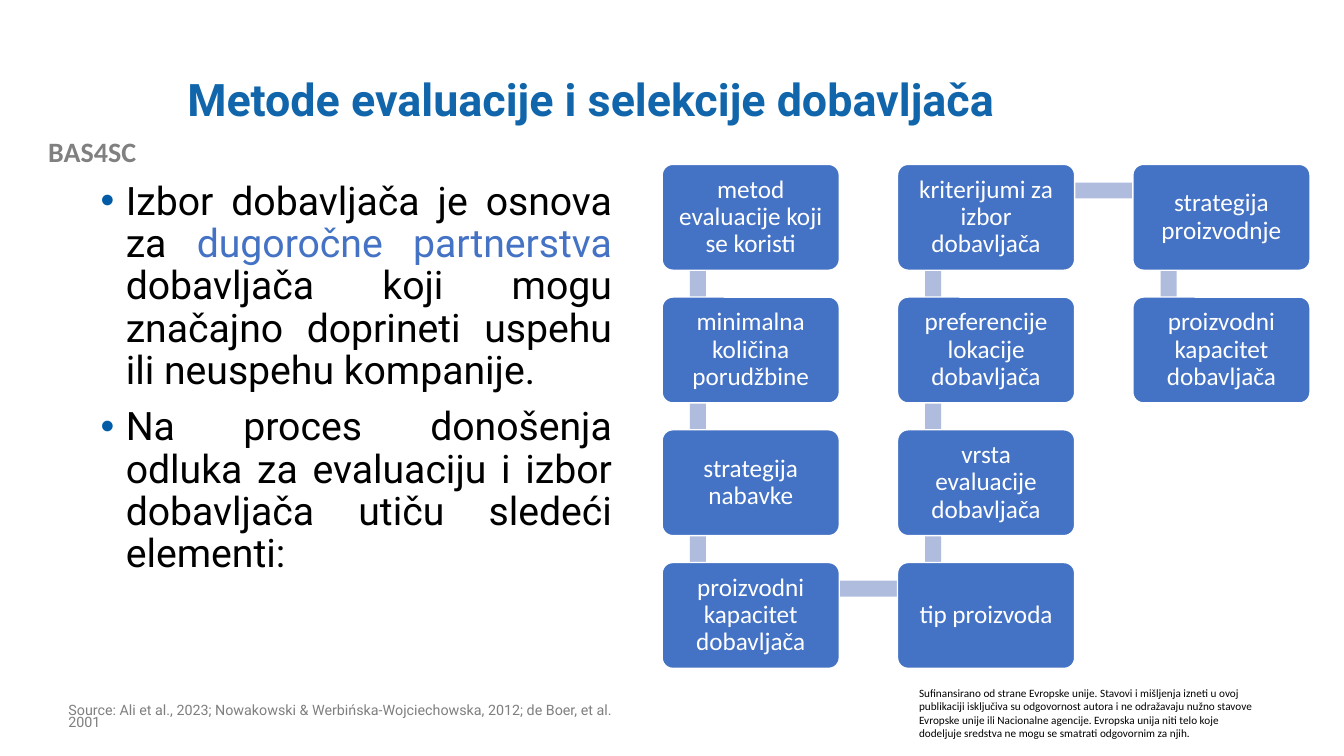
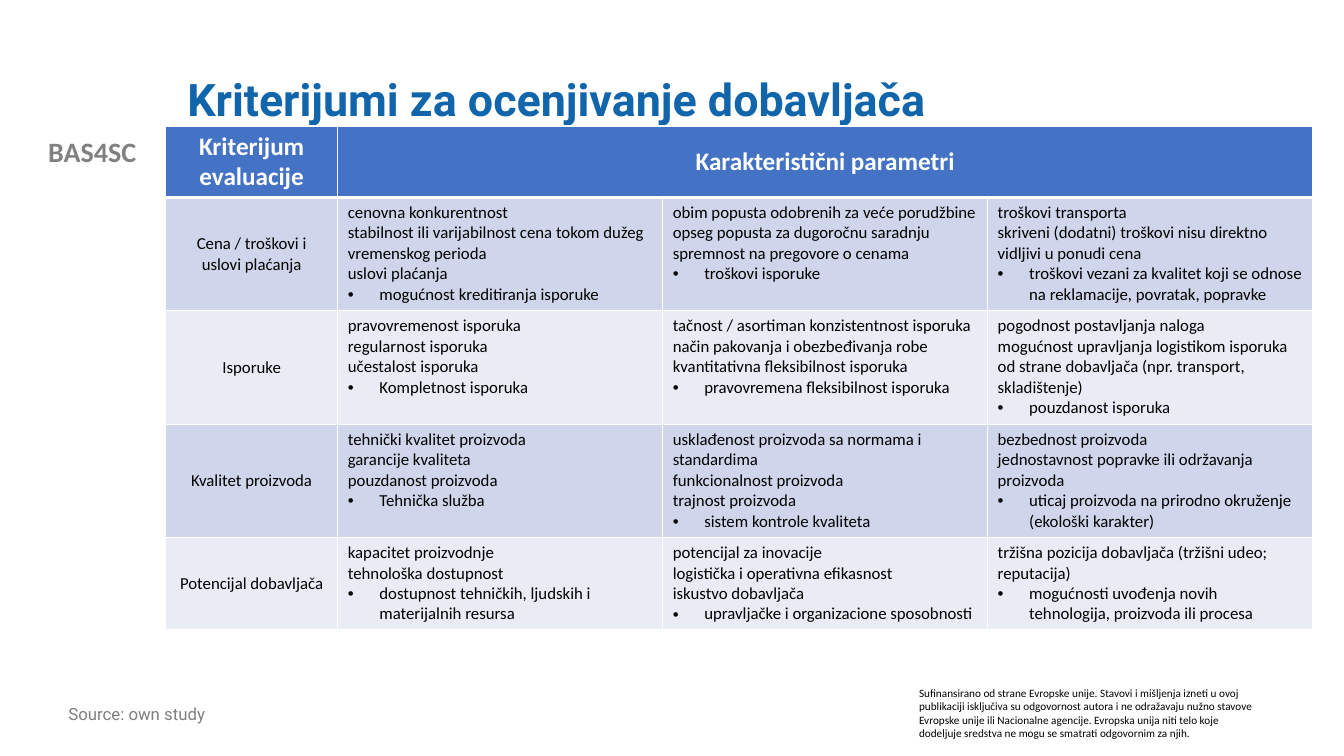
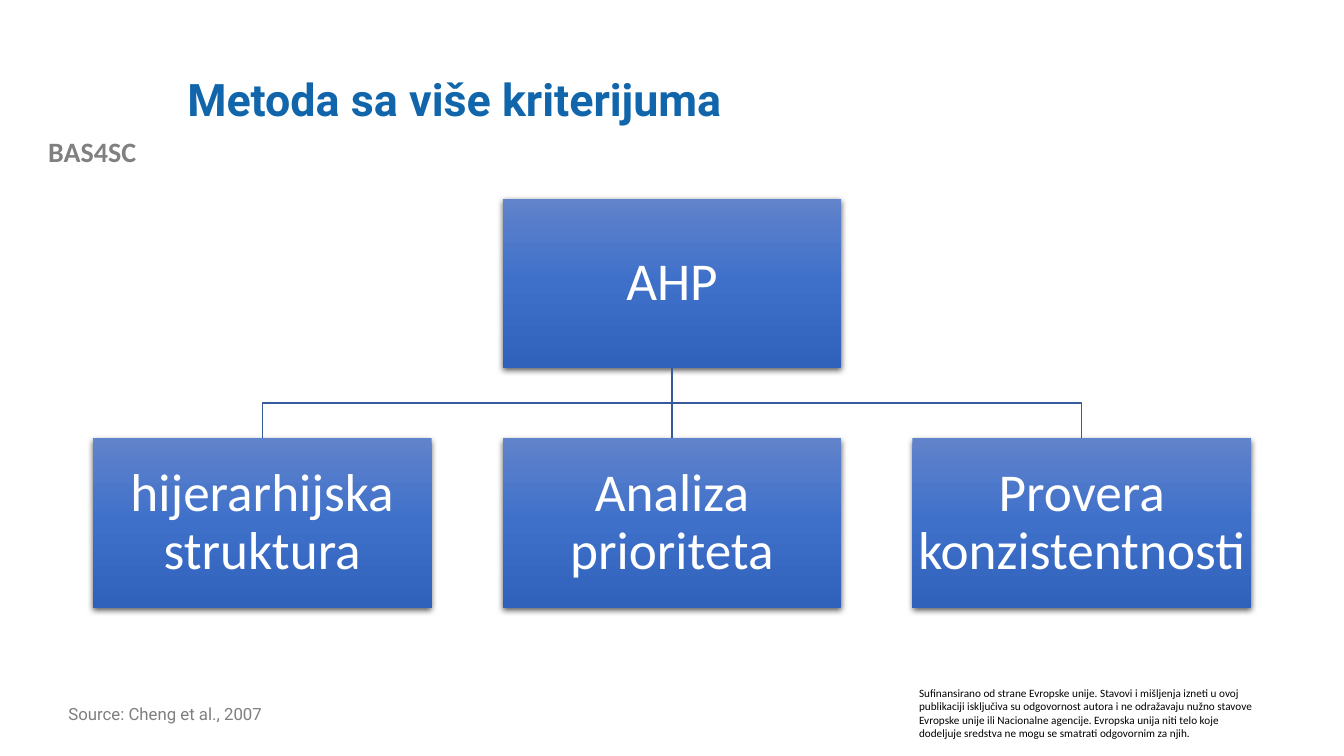
import copy
from dataclasses import dataclass

import pptx
import pptx.dml.color
import pptx.enum.shapes
import pptx.enum.text
import pptx.oxml
import pptx.oxml.ns
import pptx.util
from lxml import etree

Pt = pptx.util.Pt
RGB = pptx.dml.color.RGBColor
Align = pptx.enum.text.PP_ALIGN
Anchor = pptx.enum.text.MSO_ANCHOR
Kind = pptx.enum.shapes.MSO_SHAPE
qn = pptx.oxml.ns.qn

# Colours and fonts
WHITE = RGB(0xFF, 0xFF, 0xFF)
BLACK = RGB(0, 0, 0)
GREY = RGB(0x80, 0x80, 0x80)
ASH = RGB(0x7F, 0x7F, 0x7F)
TITLE = RGB(0x10, 0x65, 0xAB)
DOT = RGB(0x01, 0x5B, 0xA6)
BLUE = RGB(0x44, 0x72, 0xC4)
PALE = RGB(0xB0, 0xBC, 0xDE)
BANDS = (RGB(0xCF, 0xD5, 0xEA), RGB(0xE9, 0xEB, 0xF5))
LINK = RGB(0x36, 0x5B, 0x9D)
SHADES = (RGB(0x61, 0x83, 0xCB), RGB(0x3E, 0x70, 0xCA), RGB(0x30, 0x62, 0xBB))
SANS = "Calibri"
HEAD = "Roboto"

NOTICE = (
    "Sufinansirano od strane Evropske unije. Stavovi i mišljenja izneti u ovoj "
    "publikaciji isključiva su odgovornost autora i ne odražavaju nužno stavove "
    "Evropske unije ili Nacionalne agencije. Evropska unija niti telo koje "
    "dodeljuje sredstva ne mogu se smatrati odgovornim za njih."
)


@dataclass
class Box:
    x: float
    y: float
    w: float
    h: float

    def size(self):
        return Pt(self.x), Pt(self.y), Pt(self.w), Pt(self.h)


@dataclass
class Row:
    name: str
    cells: tuple


# Text
def add_dot(para, indent: float, color: RGB):
    props = para._p.get_or_add_pPr()
    props.set("marL", str(Pt(indent)))
    props.set("indent", str(-Pt(indent)))
    tint = etree.SubElement(props, qn("a:buClr"))
    etree.SubElement(tint, qn("a:srgbClr"), val=str(color))
    etree.SubElement(props, qn("a:buFont"), typeface="Arial")
    etree.SubElement(props, qn("a:buChar"), char="•")


def write(frame, text, *, size: float, font: str = SANS, color: RGB = BLACK,
          bold: bool = False, align=Align.LEFT, lead: float = 1, gap: float = 0,
          dots=(), indent: float = 0, dot: RGB = BLACK):
    """Text is one string or a list of paragraphs; a paragraph may be (text, colour) runs."""
    frame.word_wrap = True
    lines = [text] if isinstance(text, str) else text
    for i, line in enumerate(lines):
        para = frame.paragraphs[0] if i == 0 else frame.add_paragraph()
        if i in dots:
            add_dot(para, indent, dot)
        para.alignment = align
        para.line_spacing = lead
        if i and gap:
            para.space_before = Pt(gap)
        for words, tone in [(line, color)] if isinstance(line, str) else line:
            run = para.add_run()
            run.text = words
            run.font.size = Pt(size)
            run.font.name = font
            run.font.bold = bold
            run.font.color.rgb = tone


def add_text(slide, box: Box, text, anchor=Anchor.TOP, **style):
    frame = slide.shapes.add_textbox(*box.size()).text_frame
    frame.vertical_anchor = anchor
    write(frame, text, **style)


def add_block(slide, kind, box: Box, inset: float = 0):
    block = slide.shapes.add_shape(kind, *box.size())
    block.shadow.inherit = False
    block.line.fill.background()
    frame = block.text_frame
    frame.vertical_anchor = Anchor.MIDDLE
    frame.margin_left = frame.margin_right = Pt(inset)
    frame.margin_top = frame.margin_bottom = Pt(inset)
    return block


# Parts shared by all slides
def add_page(deck, title: str, source: str, size: float = 12, lead: float = 0.9):
    slide = deck.slides.add_slide(deck.slide_layouts[6])
    add_text(slide, Box(0, 92.2, 131.8, 31.7), "BAS4SC", size=20, color=GREY,
             bold=True, align=Align.CENTER)
    add_text(slide, Box(649.4, 486.7, 256.3, 46), NOTICE, size=8)
    add_text(slide, Box(126.7, 28.8, 767.5, 87.8), title, Anchor.MIDDLE, size=32,
             font=HEAD, color=TITLE, bold=True, lead=0.9)
    add_text(slide, Box(41.8, 501, 424.8, 25.2), source, size=size, font=HEAD,
             color=ASH, lead=lead)
    return slide


# Slide 1: chain of factors, down and up the columns
FACTORS = (
    "metod evaluacije koji se koristi", "minimalna količina porudžbine",
    "strategija nabavke", "proizvodni kapacitet dobavljača",
    "tip proizvoda", "vrsta evaluacije dobavljača",
    "preferencije lokacije dobavljača", "kriterijumi za izbor dobavljača",
    "strategija proizvodnje", "proizvodni kapacitet dobavljača",
)
DEEP = 4


def find_spot(i: int) -> Box:
    col, step = divmod(i, DEEP)
    row = DEEP - 1 - step if col % 2 else step
    return Box(473 + col * 168.1, 117.4 + row * 94.8, 126.5, 75.6)


def add_bar(slide, one: Box, two: Box):
    left, top = min(one.x, two.x), min(one.y, two.y)
    down = one.x == two.x
    mid_x, mid_y = (left + 25.5, top + 66.2) if down else (left + 109.8, top + 18.7)
    span, thick = (94.3 if down else 167.8), 11.4
    bar = add_block(slide, Kind.RECTANGLE,
                    Box(mid_x - span / 2, mid_y - thick / 2, span, thick))
    bar.fill.solid()
    bar.fill.fore_color.rgb = PALE
    if down:
        bar.rotation = 90 if two.y > one.y else 270


def add_chain(slide):
    for i, factor in enumerate(FACTORS):
        spot = find_spot(i)
        if i + 1 < len(FACTORS):
            add_bar(slide, spot, find_spot(i + 1))
        block = add_block(slide, Kind.ROUNDED_RECTANGLE, spot, inset=7)
        block.adjustments[0] = 0.1
        block.fill.solid()
        block.fill.fore_color.rgb = BLUE
        block.line.color.rgb = WHITE
        block.line.width = Pt(1)
        write(block.text_frame, factor, size=18, color=WHITE, align=Align.CENTER, lead=0.9)


def make_intro(deck):
    slide = add_page(
        deck, "Metode evaluacije i selekcije dobavljača",
        "Source: Ali et al., 2023; Nowakowski & Werbińska-Wojciechowska, 2012; "
        "de Boer, et al. 2001", size=10.2, lead=0.7)
    body = [
        [("Izbor dobavljača je osnova za ", BLACK), ("dugoročne partnerstva ", BLUE),
         ("dobavljača koji mogu značajno doprineti uspehu ili neuspehu kompanije.", BLACK)],
        "Na proces donošenja odluka za evaluaciju i izbor dobavljača utiču sledeći elementi:",
    ]
    add_text(slide, Box(64.8, 126, 379.4, 342.7), body, size=28, font=HEAD,
             align=Align.JUSTIFY, lead=0.9, gap=10, dots=(0, 1), indent=18, dot=DOT)
    add_chain(slide)


# Slide 2: table of criteria
ROWS = (
    Row("Cena / troškovi i uslovi plaćanja", (
        ("cenovna konkurentnost",
         "stabilnost ili varijabilnost cena tokom dužeg vremenskog perioda",
         "uslovi plaćanja", "mogućnost kreditiranja isporuke"),
        ("obim popusta odobrenih za veće porudžbine",
         "opseg popusta za dugoročnu saradnju",
         "spremnost na pregovore o cenama", "troškovi isporuke"),
        ("troškovi transporta",
         "skriveni (dodatni) troškovi nisu direktno vidljivi u ponudi cena",
         "troškovi vezani za kvalitet koji se odnose na reklamacije, povratak, popravke"))),
    Row("Isporuke", (
        ("pravovremenost isporuka", "regularnost isporuka",
         "učestalost isporuka", "Kompletnost isporuka"),
        ("tačnost / asortiman konzistentnost isporuka",
         "način pakovanja i obezbeđivanja robe",
         "kvantitativna fleksibilnost isporuka", "pravovremena fleksibilnost isporuka"),
        ("pogodnost postavljanja naloga",
         "mogućnost upravljanja logistikom isporuka od strane dobavljača "
         "(npr. transport, skladištenje)",
         "pouzdanost isporuka"))),
    Row("Kvalitet proizvoda", (
        ("tehnički kvalitet proizvoda", "garancije kvaliteta",
         "pouzdanost proizvoda", "Tehnička služba"),
        ("usklađenost proizvoda sa normama i standardima", "funkcionalnost proizvoda",
         "trajnost proizvoda", "sistem kontrole kvaliteta"),
        ("bezbednost proizvoda", "jednostavnost popravke ili održavanja proizvoda",
         "uticaj proizvoda na prirodno okruženje (ekološki karakter)"))),
    Row("Potencijal dobavljača", (
        ("kapacitet proizvodnje", "tehnološka dostupnost",
         "dostupnost tehničkih, ljudskih i materijalnih resursa"),
        ("potencijal za inovacije", "logistička i operativna efikasnost",
         "iskustvo dobavljača", "upravljačke i organizacione sposobnosti"),
        ("tržišna pozicija dobavljača (tržišni udeo; reputacija)",
         "mogućnosti uvođenja novih tehnologija, proizvoda ili procesa"))),
)
WIDTHS = (123, 232.1, 232.1, 232.1)
HEIGHTS = (51, 81, 81, 81, 66)


def paint_cell(cell, fill: RGB, top: float, base: float):
    cell.fill.solid()
    cell.fill.fore_color.rgb = fill
    props = cell._tc.get_or_add_tcPr()
    edges = (("a:lnL", 1), ("a:lnR", 1), ("a:lnT", top), ("a:lnB", base))
    for i, (tag, width) in enumerate(edges):
        edge = etree.Element(qn(tag), w=str(Pt(width)))
        tint = etree.SubElement(edge, qn("a:solidFill"))
        etree.SubElement(tint, qn("a:srgbClr"), val=str(WHITE))
        props.insert(i, edge)


def make_table(deck):
    slide = add_page(deck, "Kriterijumi za ocenjivanje dobavljača", "Source: own study")
    area = Box(118.3, 90, sum(WIDTHS), sum(HEIGHTS))
    table = slide.shapes.add_table(len(HEIGHTS), len(WIDTHS), *area.size()).table
    for col, width in zip(table.columns, WIDTHS):
        col.width = Pt(width)
    for r, height in enumerate(HEIGHTS):
        table.rows[r].height = Pt(height)
        for c in range(len(WIDTHS)):
            paint_cell(table.cell(r, c), BANDS[(r - 1) % 2] if r else BLUE,
                       3 if r == 1 else 1, 1 if r else 3)
    table.cell(0, 1).merge(table.cell(0, 3))
    for c, name in enumerate(("Kriterijum evaluacije", "Karakteristični parametri")):
        cell = table.cell(0, c)
        cell.vertical_anchor = Anchor.MIDDLE
        write(cell.text_frame, name, size=18, color=WHITE, bold=True, align=Align.CENTER)
    for r, row in enumerate(ROWS, 1):
        cell = table.cell(r, 0)
        cell.vertical_anchor = Anchor.MIDDLE
        write(cell.text_frame, row.name, size=12, align=Align.CENTER)
        for c, items in enumerate(row.cells, 1):
            write(table.cell(r, c).text_frame, items, size=12,
                  dots=(len(items) - 1,), indent=22.5)


# Slide 3: tree
SHADOW = (
    '<a:outerShdw %s blurRad="57150" dist="19050" dir="5400000" algn="ctr" '
    'rotWithShape="0"><a:srgbClr val="000000"><a:alpha val="63000"/></a:srgbClr>'
    "</a:outerShdw>" % pptx.oxml.ns.nsdecls("a")
)
MID, WIDE, TALL, PITCH = 480, 242, 121, 292.7
ROOT, LEAF = 141.8, 313.2


def add_node(slide, mid: float, top: float, text: str):
    node = add_block(slide, Kind.RECTANGLE, Box(mid - WIDE / 2, top, WIDE, TALL), inset=2)
    node.fill.gradient()
    node.fill.gradient_angle = 270
    stops = node._element.spPr.find(".//" + qn("a:gsLst"))
    stops.append(copy.deepcopy(stops[0]))
    for i, (stop, shade) in enumerate(zip(node.fill.gradient_stops, SHADES)):
        stop.position = i / 2
        stop.color.rgb = shade
    node._element.spPr.find(qn("a:effectLst")).append(pptx.oxml.parse_xml(SHADOW))
    write(node.text_frame, text, size=38, color=WHITE, align=Align.CENTER, lead=0.9)
    return node


def style_line(line):
    line.color.rgb = LINK
    line.width = Pt(1)


def add_branch(slide, mid: float):
    base = ROOT + TALL
    bend = (base + LEAF) / 2
    pen = slide.shapes.build_freeform(Pt(MID), Pt(base))
    pen.add_line_segments([(Pt(MID), Pt(bend)), (Pt(mid), Pt(bend)), (Pt(mid), Pt(LEAF))],
                          close=False)
    branch = pen.convert_to_shape()
    branch.shadow.inherit = False
    branch.fill.background()
    style_line(branch.line)


def add_stem(slide, root, leaf):
    stem = slide.shapes.add_connector(pptx.enum.shapes.MSO_CONNECTOR.STRAIGHT, 0, 0, 0, 0)
    stem.begin_connect(root, 2)
    stem.end_connect(leaf, 0)
    style_line(stem.line)
    etree.SubElement(stem._element.spPr, qn("a:effectLst"))


def make_tree(deck):
    slide = add_page(deck, "Metoda sa više kriterijuma", "Source: Cheng et al., 2007")
    for side in (1, -1):
        add_branch(slide, MID + side * PITCH)
    root = add_node(slide, MID, ROOT, "AHP")
    names = ("hijerarhijska struktura", "Analiza prioriteta", "Provera konzistentnosti")
    leaves = [add_node(slide, MID + (i - 1) * PITCH, LEAF, name)
              for i, name in enumerate(names)]
    add_stem(slide, root, leaves[1])


def main():
    deck = pptx.Presentation()
    deck.slide_width, deck.slide_height = Pt(960), Pt(540)
    make_intro(deck)
    make_table(deck)
    make_tree(deck)
    deck.save("out.pptx")


if __name__ == "__main__":
    main()
